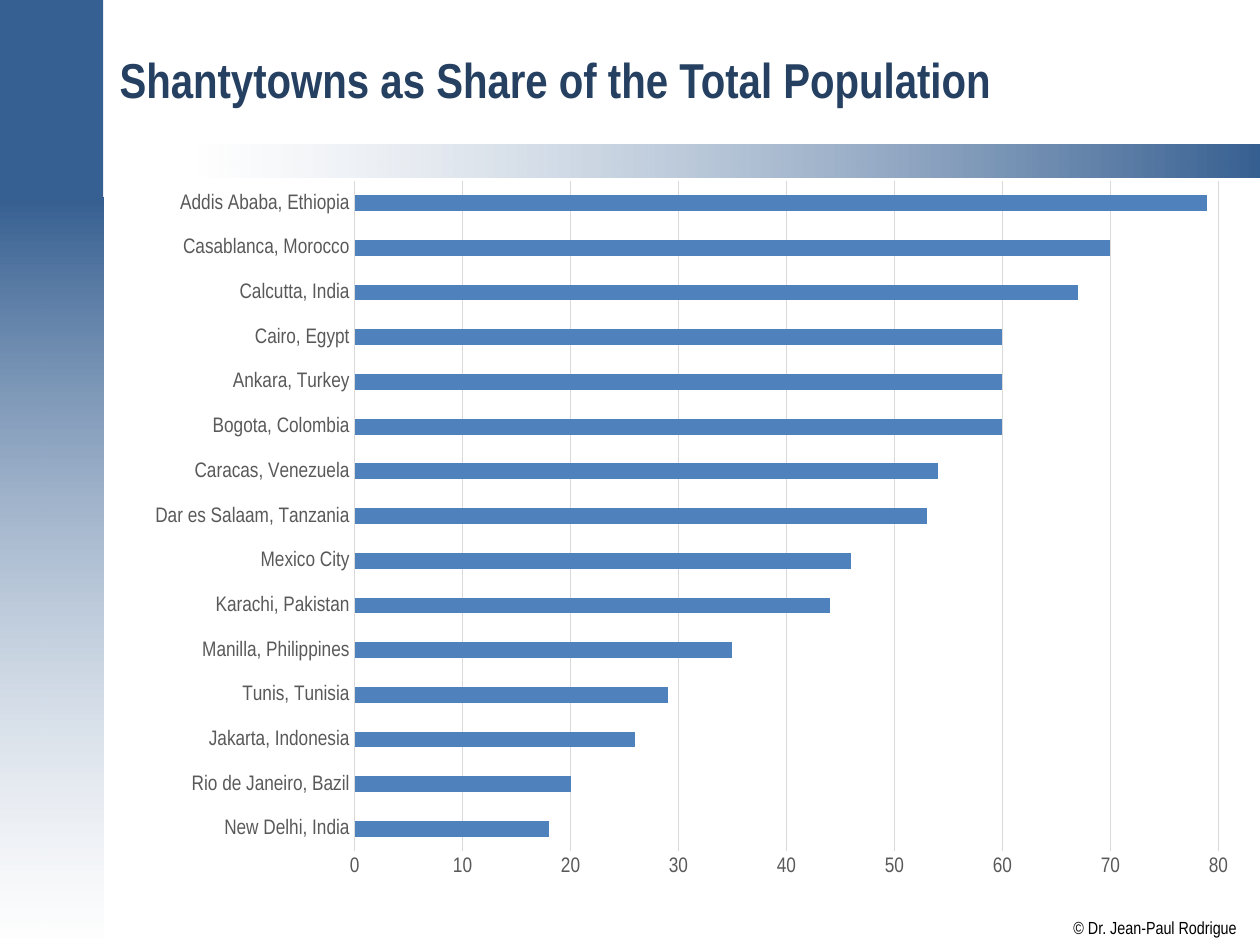
from lxml.etree import SubElement
from pptx import Presentation
from pptx.chart.data import CategoryChartData
from pptx.dml.color import RGBColor
from pptx.enum.chart import XL_CHART_TYPE as ChartType, XL_TICK_MARK as Tick
from pptx.enum.shapes import MSO_SHAPE as Shape
from pptx.enum.text import MSO_ANCHOR as Anchor, PP_ALIGN as Align
from pptx.oxml import parse_xml
from pptx.oxml.ns import nsdecls, qn
from pptx.util import Inches, Pt

BLUE = RGBColor(0x37, 0x60, 0x92)
NAVY = RGBColor(0x25, 0x40, 0x61)
BAR = RGBColor(0x4F, 0x81, 0xBD)
LABEL = RGBColor(0x59, 0x59, 0x59)
GRID = RGBColor(0xD9, 0xD9, 0xD9)
WHITE = RGBColor(0xFF, 0xFF, 0xFF)
BLACK = RGBColor(0, 0, 0)
FONT = "Arial Narrow"

SHARES = [
    ("New Delhi, India", 18),
    ("Rio de Janeiro, Bazil", 20),
    ("Jakarta, Indonesia", 26),
    ("Tunis, Tunisia", 29),
    ("Manilla, Philippines", 35),
    ("Karachi, Pakistan", 44),
    ("Mexico City", 46),
    ("Dar es Salaam, Tanzania", 53),
    ("Caracas, Venezuela", 54),
    ("Bogota, Colombia", 60),
    ("Ankara, Turkey", 60),
    ("Cairo, Egypt", 60),
    ("Calcutta, India", 67),
    ("Casablanca, Morocco", 70),
    ("Addis Ababa, Ethiopia", 79),
]


def style_font(font, size, color, bold=False):
    font.name = FONT
    font.size = Pt(size)
    font.bold = bold
    font.color.rgb = color


def add_band(slide, box):
    s = slide.shapes.add_shape(Shape.RECTANGLE, *map(Inches, box))
    s.shadow.inherit = False
    s.line.fill.background()
    return s


def add_solid_band(slide, box):
    s = add_band(slide, box)
    s.fill.solid()
    s.fill.fore_color.rgb = BLUE


def add_fading_band(slide, box, colors, angle):
    s = add_band(slide, box)
    s.fill.gradient()
    s.fill.gradient_angle = angle
    for stop, color in zip(s.fill.gradient_stops, colors):
        stop.color.rgb = color
    for clr in s.element.spPr.iter(qn("a:srgbClr")):
        if clr.get("val") == str(WHITE):
            SubElement(clr, qn("a:alpha"), val="50000")


def add_text(slide, box, text, size, color, bold=False, margins=(0, 0),
             anchor=Anchor.TOP, align=Align.LEFT, wrap=True):
    tf = slide.shapes.add_textbox(*map(Inches, box)).text_frame
    tf.word_wrap = wrap
    tf.vertical_anchor = anchor
    tf.margin_left = tf.margin_right = Inches(margins[0])
    tf.margin_top = tf.margin_bottom = Inches(margins[1])
    p = tf.paragraphs[0]
    p.alignment = align
    r = p.add_run()
    r.text = text
    style_font(r.font, size, color, bold)


def set_plot_layout(chart, x, y, w, h):
    area = chart.element.find(".//" + qn("c:plotArea"))
    for old in area.findall(qn("c:layout")):
        area.remove(old)
    sizes = "".join(f'<c:{tag} val="{val}"/>'
                    for tag, val in (("x", x), ("y", y), ("w", w), ("h", h)))
    area.insert(0, parse_xml(
        f'<c:layout {nsdecls("c")}><c:manualLayout>'
        '<c:layoutTarget val="inner"/>'
        '<c:xMode val="edge"/><c:yMode val="edge"/>'
        f'{sizes}</c:manualLayout></c:layout>'))


def add_share_chart(slide, box):
    data = CategoryChartData()
    data.categories = [city for city, share in SHARES]
    data.add_series("Series 1", [share for city, share in SHARES])
    chart = slide.shapes.add_chart(
        ChartType.BAR_CLUSTERED, *map(Inches, box), data).chart
    chart.has_legend = False
    chart.has_title = False
    style_font(chart.font, 10, BLACK)
    set_plot_layout(chart, 0.22, 0, 0.76, 0.92)

    plot = chart.plots[0]
    plot.gap_width = 182
    plot.vary_by_categories = False
    fill = plot.series[0].format.fill
    fill.solid()
    fill.fore_color.rgb = BAR

    cat, val = chart.category_axis, chart.value_axis
    for axis in (cat, val):
        axis.major_tick_mark = axis.minor_tick_mark = Tick.NONE
        style_font(axis.tick_labels.font, 12, LABEL)
    val.minimum_scale, val.maximum_scale, val.major_unit = 0, 80, 10
    val.has_major_gridlines = True
    val.format.line.fill.background()
    for line in (cat.format.line, val.major_gridlines.format.line):
        line.color.rgb = GRID
        line.width = Pt(0.75)


def main():
    prs = Presentation()
    prs.slide_width, prs.slide_height = Inches(10), Inches(7.5)
    slide = prs.slides.add_slide(prs.slide_layouts[6])
    add_fading_band(slide, (-0.01, 1.57, 0.83, 5.93), (BLUE, WHITE), 270)
    add_fading_band(slide, (1.57, 1.15, 8.43, 0.26), (WHITE, BLUE), 0)
    add_solid_band(slide, (-0.01, -0.01, 0.83, 1.58))
    add_text(slide, (8.52, 7.28, 1.3, 0.17), "© Dr. Jean-Paul Rodrigue",
             10, BLACK, wrap=False)
    add_text(slide, (0.85, 0.11, 8.98, 1.04),
             "Shantytowns as Share of the Total Population", 28, NAVY,
             bold=True, margins=(0.1, 0.05), anchor=Anchor.MIDDLE)
    add_share_chart(slide, (0.83, 1.43, 9.02, 5.79))
    prs.save("out.pptx")


if __name__ == "__main__":
    main()
